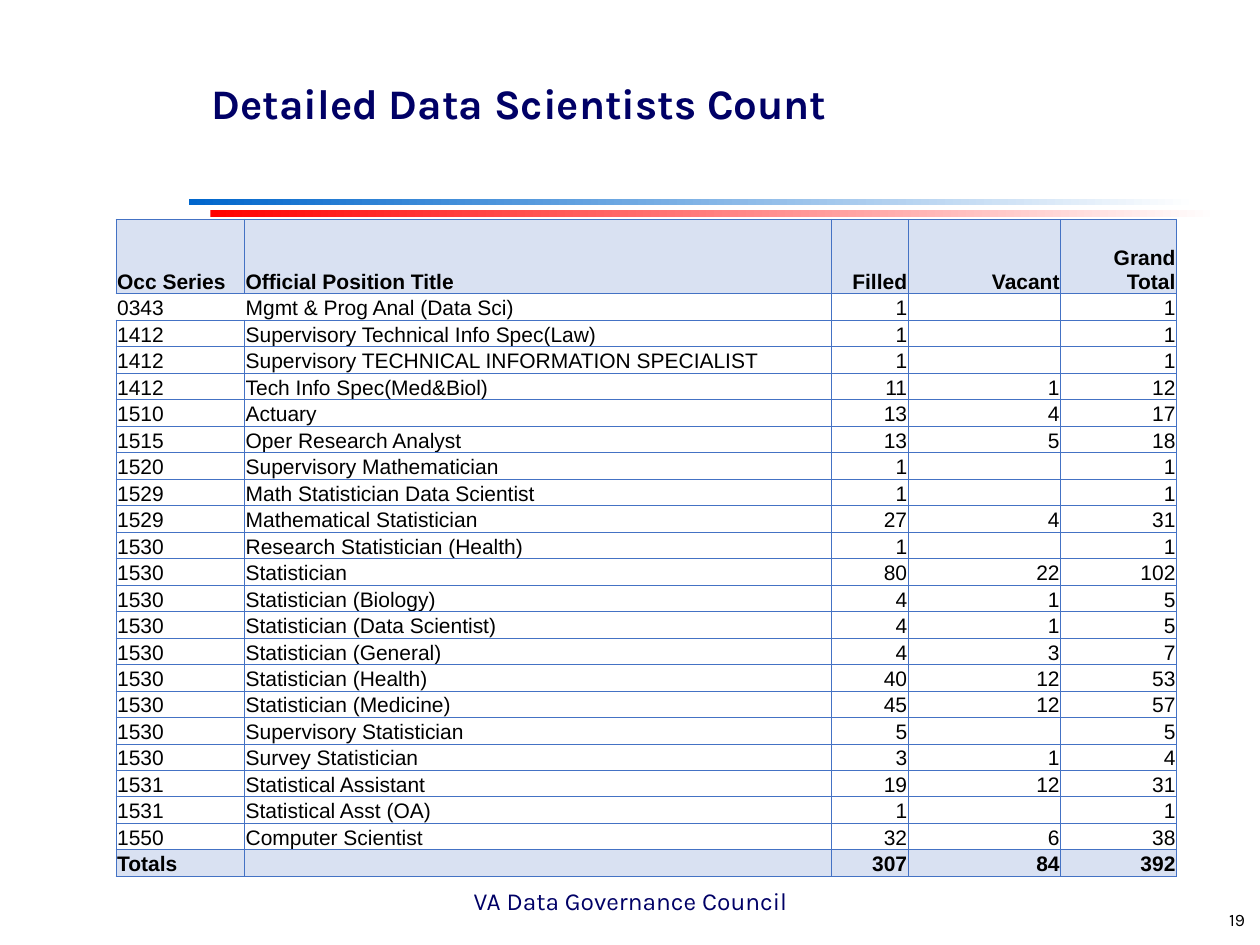
import dataclasses

import lxml.etree
import pptx
import pptx.dml.color
import pptx.enum.dml
import pptx.enum.shapes
import pptx.enum.text
import pptx.oxml.ns
import pptx.util

Inches = pptx.util.Inches
Pt = pptx.util.Pt
Align = pptx.enum.text.PP_ALIGN
Anchor = pptx.enum.text.MSO_ANCHOR
qn = pptx.oxml.ns.qn


@dataclasses.dataclass(frozen=True)
class Theme:
    navy: str = "000066"
    black: str = "000000"
    white: str = "FFFFFF"
    blue: str = "0066CC"
    red: str = "FF0000"
    band: str = "D9E1F2"
    border: str = "4472C4"
    heading_font: str = "Karla"
    table_font: str = "Arial"
    title_size: int = 24
    footer_size: int = 14
    table_size: int = 12
    number_size: int = 10
    border_width: float = 0.5


THEME = Theme()

COLUMN_WIDTHS = (1.02, 4.66, 0.61, 1.21, 0.92)
HEADER_HEIGHT = 0.59
ROW_HEIGHT = 0.2
FIRST_NUMBER_COLUMN = 2

ROWS = [
    ("Occ Series", "Official Position Title", "Filled", "Vacant", "Grand Total"),
    ("0343", "Mgmt & Prog Anal (Data Sci)", "1", "", "1"),
    ("1412", "Supervisory Technical Info Spec(Law)", "1", "", "1"),
    ("1412", "Supervisory TECHNICAL INFORMATION SPECIALIST", "1", "", "1"),
    ("1412", "Tech Info Spec(Med&Biol)", "11", "1", "12"),
    ("1510", "Actuary", "13", "4", "17"),
    ("1515", "Oper Research Analyst", "13", "5", "18"),
    ("1520", "Supervisory Mathematician", "1", "", "1"),
    ("1529", "Math Statistician Data Scientist", "1", "", "1"),
    ("1529", "Mathematical Statistician", "27", "4", "31"),
    ("1530", "Research Statistician (Health)", "1", "", "1"),
    ("1530", "Statistician", "80", "22", "102"),
    ("1530", "Statistician (Biology)", "4", "1", "5"),
    ("1530", "Statistician (Data Scientist)", "4", "1", "5"),
    ("1530", "Statistician (General)", "4", "3", "7"),
    ("1530", "Statistician (Health)", "40", "12", "53"),
    ("1530", "Statistician (Medicine)", "45", "12", "57"),
    ("1530", "Supervisory Statistician", "5", "", "5"),
    ("1530", "Survey Statistician", "3", "1", "4"),
    ("1531", "Statistical Assistant", "19", "12", "31"),
    ("1531", "Statistical Asst (OA)", "1", "", "1"),
    ("1550", "Computer Scientist", "32", "6", "38"),
    ("Totals", "", "307", "84", "392"),
]

# Sides left without a line in the first data row, by (row, column)
OPEN_SIDES = {(1, 0): "LR", (1, 1): "L"}


def rgb(color):
    return pptx.dml.color.RGBColor.from_string(color)


def write_text(text_frame, text, *, size, font=THEME.heading_font,
               color=THEME.black, bold=False, align=Align.LEFT):
    paragraph = text_frame.paragraphs[0]
    paragraph.alignment = align
    if not text:
        # An empty cell keeps the row's type size, so the row stays low
        end = lxml.etree.SubElement(paragraph._p, qn("a:endParaRPr"))
        end.set("sz", str(size * 100))
        return
    run = paragraph.add_run()
    run.text = text
    run.font.name = font
    run.font.size = Pt(size)
    run.font.bold = bold
    run.font.color.rgb = rgb(color)


def add_text(slide, text, left, top, width, height, **text_format):
    box = slide.shapes.add_textbox(
        Inches(left), Inches(top), Inches(width), Inches(height))
    box.text_frame.word_wrap = True
    box.text_frame.vertical_anchor = Anchor.MIDDLE
    write_text(box.text_frame, text, **text_format)


def add_fading_bar(slide, left, top, color):
    bar = slide.shapes.add_shape(
        pptx.enum.shapes.MSO_SHAPE.RECTANGLE,
        Inches(left), Inches(top), Inches(8), Inches(0.05))
    bar.shadow.inherit = False
    bar.line.fill.background()
    bar.fill.gradient()
    bar.fill.gradient_angle = 0
    for stop, stop_color in zip(bar.fill.gradient_stops, (color, THEME.white)):
        stop.color.rgb = rgb(stop_color)


def set_borders(cell, open_sides):
    properties = cell._tc.get_or_add_tcPr()
    for side in "LRTB":
        line = lxml.etree.SubElement(properties, qn(f"a:ln{side}"))
        line.set("w", str(Pt(THEME.border_width)))
        if side in open_sides:
            lxml.etree.SubElement(line, qn("a:noFill"))
        else:
            fill = lxml.etree.SubElement(line, qn("a:solidFill"))
            lxml.etree.SubElement(fill, qn("a:srgbClr")).set("val", THEME.border)


def format_cell(cell, text, *, emphasized, align, open_sides):
    cell.margin_left = cell.margin_right = cell.margin_top = Inches(0.01)
    cell.margin_bottom = 0
    cell.vertical_anchor = Anchor.BOTTOM
    set_borders(cell, open_sides)
    if emphasized:
        cell.fill.solid()
        cell.fill.fore_color.rgb = rgb(THEME.band)
    else:
        cell.fill.background()
    write_text(cell.text_frame, text, size=THEME.table_size,
               font=THEME.table_font, bold=emphasized, align=align)


def add_count_table(slide, left, top):
    heights = [HEADER_HEIGHT] + [ROW_HEIGHT] * (len(ROWS) - 1)
    table = slide.shapes.add_table(
        len(ROWS), len(COLUMN_WIDTHS), Inches(left), Inches(top),
        Inches(sum(COLUMN_WIDTHS)), Inches(sum(heights))).table
    table.horz_banding = False
    for column, width in zip(table.columns, COLUMN_WIDTHS):
        column.width = Inches(width)
    for row, height in zip(table.rows, heights):
        row.height = Inches(height)
    for row_index, values in enumerate(ROWS):
        for column_index, text in enumerate(values):
            is_number = column_index >= FIRST_NUMBER_COLUMN
            format_cell(
                table.cell(row_index, column_index), text,
                emphasized=row_index in (0, len(ROWS) - 1),
                align=Align.RIGHT if is_number else Align.LEFT,
                open_sides=OPEN_SIDES.get((row_index, column_index), ""))


def main():
    presentation = pptx.Presentation()
    presentation.slide_width = Inches(10)
    presentation.slide_height = Inches(7.5)
    slide = presentation.slides.add_slide(presentation.slide_layouts[6])

    # Double rule under the title
    add_fading_bar(slide, 1.5, 1.58, THEME.blue)
    add_fading_bar(slide, 1.67, 1.67, THEME.red)

    # Title, page number and footer
    add_text(slide, "Detailed Data Scientists Count", 1.58, 0, 8.42, 1.63,
             size=THEME.title_size, color=THEME.navy, bold=True)
    add_text(slide, "19", 7.65, 7.1, 2.33, 0.4,
             size=THEME.number_size, align=Align.RIGHT)
    add_text(slide, "VA Data Governance Council", 3.42, 6.95, 3.17, 0.4,
             size=THEME.footer_size, color=THEME.navy, align=Align.CENTER)

    # Positions by occupational series
    add_count_table(slide, 0.92, 1.74)

    presentation.save("out.pptx")


if __name__ == "__main__":
    main()
